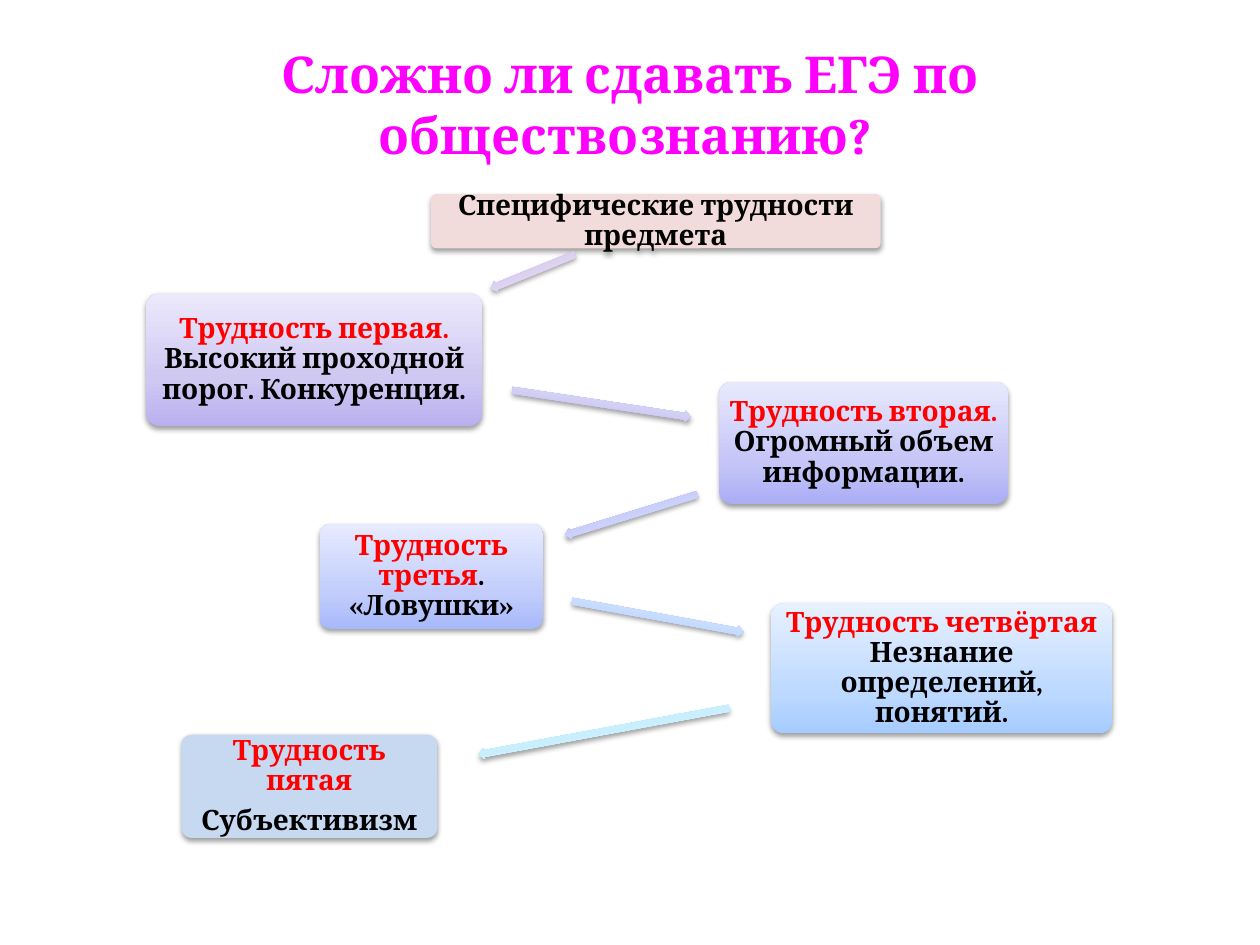
"""Build the slide on the difficulties of the social studies exam."""
from copy import deepcopy

from lxml import etree
from pptx import Presentation
from pptx import util as u
from pptx.dml.color import RGBColor
from pptx.enum import shapes, text
from pptx.oxml.ns import qn

FONT = "Cambria"
COLORS = {
    "title": "FF00FF",
    "accent": "FF0000",
    "ink": "000000",
    "heading": "F2DCDB",
    "last": "C6D9F1",
}
GRADIENTS = {
    "arrow1": ("C9B5E8", "D8CBEE", "F0EAF9"),
    "card1": ("BAB0EF", "CEC8F2", "ECE9FB"),
    "arrow2": ("B6AFF0", "CBC7F3", "EBE9FB"),
    "card2": ("ABADF5", "C5C6F7", "E8E8FD"),
    "arrow3": ("A9B2F8", "C3C9F9", "E7E9FE"),
    "card3": ("A7B9FB", "C2CDFB", "E6EBFF"),
    "arrow4": ("A5C6FF", "BFD6FF", "E6EFFF"),
    "card4": ("A5CCFF", "BFDAFF", "E7F1FF"),
    "arrow5": ("A7E6FF", "C1EDFF", "E7F8FF"),
}
STOPS = (0, 0.35, 1)
ARROW_HEIGHT = 6.5
INSET = 5.04

HEADING = ((246.3, 110.9, 257, 31),
           [[("Специфические трудности предмета", "ink")]])
STEPS = [
    ((278.6, 151.9, 51.8), 157.9, "card1", (83.5, 167.8, 192.2, 75.6), 5.6,
     [[("Трудность первая. ", "accent"),
       ("Высокий проходной порог. Конкуренция.", "ink")]]),
    ((292.3, 227.5, 103), 8.6, "card2", (411.1, 218.2, 164.9, 69.8), 5.6,
     [[("Трудность вторая. ", "accent"),
       ("Огромный объем информации.", "ink")]]),
    ((321.1, 290.9, 79.2), 162.9, "card3", (182.9, 299.5, 127.4, 59.8), 5.6,
     [[("Трудность третья", "accent"), (". «Ловушки»", "ink")]]),
    ((326.2, 349.2, 99.4), 10.3, "card4", (440.6, 344.9, 195.1, 74.2), 0,
     [[("Трудность четвёртая", "accent")],
      [("Незнание определений, понятий.", "ink")]]),
    ((272.2, 414.7, 145.4), 169.5, "last", (103.7, 419.8, 146.2, 59), 5.6,
     [[("Трудность пятая", "accent")], [("Субъективизм", "ink")]]),
]


def rgb(name):
    """Return the named colour."""
    return RGBColor.from_string(COLORS[name])


def paint(shape, name):
    """Fill a shape with a named solid colour or gradient."""
    fill = shape.fill
    if name in COLORS:
        fill.solid()
        fill.fore_color.rgb = rgb(name)
        return
    fill.gradient()
    fill.gradient_angle = 90
    stop_list = shape._element.spPr.find(qn("a:gradFill")).find(qn("a:gsLst"))
    stop_list.append(deepcopy(stop_list[0]))
    for stop, position, color in zip(fill.gradient_stops, STOPS, GRADIENTS[name]):
        stop.position = position
        stop.color.rgb = RGBColor.from_string(color)


def cast_shadow(shape):
    """Give a shape a soft shadow straight below it."""
    shape.shadow.inherit = False
    effects = shape._element.spPr.find(qn("a:effectLst"))
    shadow = etree.SubElement(
        effects, qn("a:outerShdw"), blurRad=str(u.Pt(3.1)), dist=str(u.Pt(1.6)),
        dir="5400000", rotWithShape="0")
    color = etree.SubElement(shadow, qn("a:srgbClr"), val=COLORS["ink"])
    etree.SubElement(color, qn("a:alpha"), val="38000")


def add_block(page, kind, place, color):
    """Add a painted, shadowed shape without an outline."""
    shape = page.shapes.add_shape(kind, *(u.Pt(length) for length in place))
    paint(shape, color)
    shape.line.fill.background()
    cast_shadow(shape)
    return shape


def style_paragraph(para, size):
    """Centre a paragraph and set its bold font."""
    para.alignment = text.PP_ALIGN.CENTER
    para.font.name = FONT
    para.font.size = u.Pt(size)
    para.font.bold = True


def set_margins(frame, margin):
    """Set the same margin on all four sides of a text frame."""
    frame.margin_left = frame.margin_right = u.Pt(margin)
    frame.margin_top = frame.margin_bottom = u.Pt(margin)


def add_card(page, place, color, paragraphs, space_after):
    """Add a rounded card with centred text in coloured spans."""
    box = add_block(page, shapes.MSO_SHAPE.ROUNDED_RECTANGLE, place, color)
    box.adjustments[0] = 0.1
    frame = box.text_frame
    frame.word_wrap = True
    frame.vertical_anchor = text.MSO_ANCHOR.MIDDLE
    set_margins(frame, round(INSET - 0.029 * place[3], 2))
    for index, spans in enumerate(paragraphs):
        para = frame.add_paragraph() if index else frame.paragraphs[0]
        style_paragraph(para, 16)
        para.line_spacing = 0.9
        para.space_after = u.Pt(space_after)
        for words, ink in spans:
            span = para.add_run()
            span.text = words
            span.font.color.rgb = rgb(ink)


def add_arrow(page, place, angle, color):
    """Add a thin turned block arrow."""
    arrow = add_block(page, shapes.MSO_SHAPE.RIGHT_ARROW,
                      (*place, ARROW_HEIGHT), color)
    arrow.adjustments[0] = 0.6
    arrow.adjustments[1] = 0.5
    arrow.rotation = angle


def set_title(page, words):
    """Place and format the title."""
    title = page.shapes.title
    title.left, title.top = u.Pt(130.3), u.Pt(24.5)
    title.width, title.height = u.Pt(460), u.Pt(70.6)
    frame = title.text_frame
    frame.text = words
    frame.word_wrap = True
    frame.auto_size = text.MSO_AUTO_SIZE.SHAPE_TO_FIT_TEXT
    frame.vertical_anchor = text.MSO_ANCHOR.TOP
    set_margins(frame, 0)
    para = frame.paragraphs[0]
    style_paragraph(para, 29)
    para.font.color.rgb = rgb("title")


def main():
    """Build and save the deck."""
    deck = Presentation()
    deck.slide_width, deck.slide_height = u.Pt(720), u.Pt(540)
    page = deck.slides.add_slide(deck.slide_layouts.get_by_name("Title Only"))
    set_title(page, "Сложно ли сдавать ЕГЭ по обществознанию? ")
    place, paragraphs = HEADING
    add_card(page, place, "heading", paragraphs, 5.6)
    for number, step in enumerate(STEPS, 1):
        arrow_place, angle, color, place, space_after, paragraphs = step
        add_arrow(page, arrow_place, angle, f"arrow{number}")
        add_card(page, place, color, paragraphs, space_after)
    deck.save("out.pptx")


if __name__ == "__main__":
    main()
